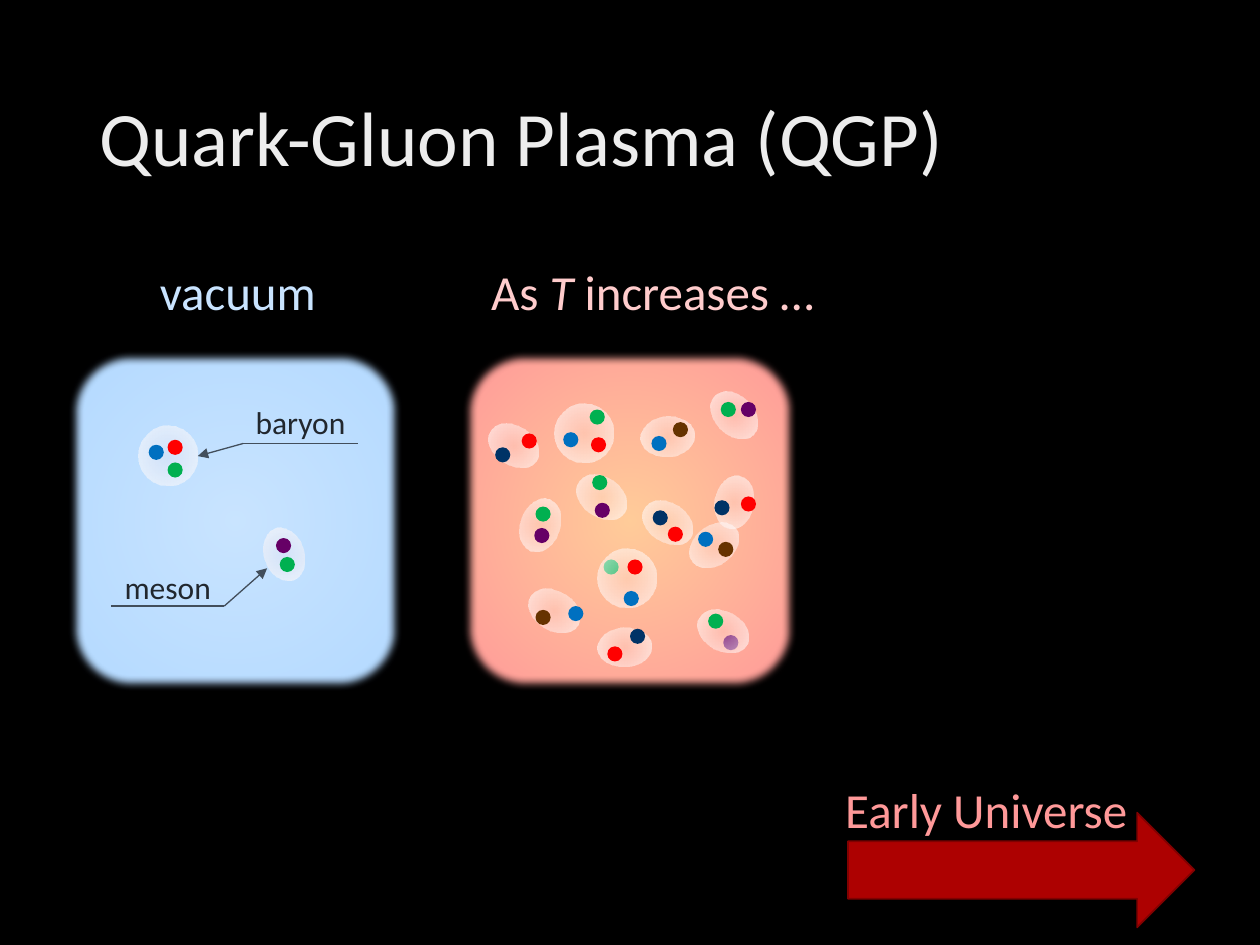
from lxml.etree import SubElement
from pptx import Presentation
from pptx.dml.color import RGBColor
from pptx.enum.shapes import MSO_CONNECTOR, MSO_SHAPE
from pptx.enum.text import MSO_ANCHOR
from pptx.oxml import parse_xml
from pptx.oxml.ns import nsdecls, qn
from pptx.util import Inches, Pt

# The slide is a grid of 1000 columns by 750 rows
CELL = Inches(10) // 1000
FONT = "Calibri"

BLACK = RGBColor(0x00, 0x00, 0x00)
TITLE_GREY = RGBColor(0xED, 0xED, 0xED)
PALE_BLUE = RGBColor(0xC9, 0xE4, 0xFF)
SKY_BLUE = RGBColor(0xB3, 0xD9, 0xFF)
PALE_PINK = RGBColor(0xFF, 0xCC, 0xCC)
SALMON = RGBColor(0xFF, 0x99, 0x99)
PEACH = RGBColor(0xFF, 0xCC, 0x99)
BLUSH = RGBColor(0xFF, 0xEE, 0xEE)
WHITE = RGBColor(0xFF, 0xFF, 0xFF)
ARROW_RED = RGBColor(0xAD, 0x01, 0x01)
ARROW_EDGE = RGBColor(0x80, 0x01, 0x01)
LABEL_INK = RGBColor(0x21, 0x27, 0x2E)
LINE_GREY = RGBColor(0x42, 0x4E, 0x5B)

# Quarks and antiquarks
RED = RGBColor(0xFF, 0x00, 0x00)
GREEN = RGBColor(0x00, 0xB0, 0x50)
BLUE = RGBColor(0x00, 0x70, 0xC0)
PURPLE = RGBColor(0x66, 0x00, 0x66)
NAVY = RGBColor(0x00, 0x33, 0x66)
BROWN = RGBColor(0x66, 0x33, 0x00)

QUARK = 12
BARYON = (47, 47)
MESON = (31, 43)

# Column, row, size, rotation
VACUUM_HADRONS = [(110, 338, BARYON, 0), (210, 418, MESON, 341.4)]
HOT_HADRONS = [
    (440, 320, BARYON, 0), (413, 395, MESON, 20.5),
    (474, 435, BARYON, 0), (514, 325, MESON, 84.8),
    (514, 393, MESON, 304.3), (424, 463, MESON, 122.2),
    (567, 377, MESON, 10.2), (558, 479, MESON, 298.4),
    (551, 411, MESON, 50.7), (392, 332, MESON, 304.3),
    (462, 373, MESON, 304.3), (567, 308, MESON, 315.7),
    (480, 492, MESON, 86.5),
]

# Column and row of every quark, by colour
VACUUM_QUARKS = {
    RED: [(133, 349)],
    GREEN: [(133, 367), (222, 442)],
    BLUE: [(118, 353)],
    PURPLE: [(219, 427)],
}
VEILED_QUARKS = {GREEN: [(479, 444)], PURPLE: [(574, 504)]}
HOT_QUARKS = {
    RED: [(469, 347), (482, 513), (498, 444), (414, 344), (530, 418), (588, 394)],
    GREEN: [(562, 487), (468, 325), (425, 402), (470, 377), (572, 319)],
    BLUE: [(447, 343), (495, 469), (451, 481), (517, 346), (554, 422)],
    PURPLE: [(424, 419), (472, 399), (588, 319)],
    NAVY: [(518, 405), (393, 355), (567, 397), (500, 499)],
    BROWN: [(425, 484), (570, 430), (534, 335)],
}


def grid(*cells):
    return [round(cell * CELL) for cell in cells]


def add_text(slide, box, runs, size, color, wrap=False):
    """Runs are pairs of text and italic."""
    shape = slide.shapes.add_textbox(*grid(*box))
    frame = shape.text_frame
    frame.word_wrap = wrap
    paragraph = frame.paragraphs[0]
    for text, italic in runs:
        run = paragraph.add_run()
        run.text = text
        if italic:
            run.font.italic = True
    paragraph.font.name = FONT
    paragraph.font.size = Pt(size)
    paragraph.font.color.rgb = color
    return shape


def add_plain_shape(slide, kind, box, color):
    shape = slide.shapes.add_shape(kind, *grid(*box))
    shape.shadow.inherit = False
    shape.fill.solid()
    shape.fill.fore_color.rgb = color
    shape.line.fill.background()
    return shape


def set_radial_fill(shape, stops):
    """Stops are position, colour and opacity, in percent, from the centre out."""
    stop_xml = "".join(
        f'<a:gs pos="{position * 1000}"><a:srgbClr val="{color}">'
        f'<a:alpha val="{opacity * 1000}"/></a:srgbClr></a:gs>'
        for position, color, opacity in stops
    )
    gradient = parse_xml(
        f'<a:gradFill {nsdecls("a")} rotWithShape="1"><a:gsLst>{stop_xml}</a:gsLst>'
        '<a:path path="circle"><a:fillToRect l="50000" t="50000" r="50000" b="50000"/>'
        "</a:path></a:gradFill>"
    )
    properties = shape._element.spPr
    properties.replace(properties.find(qn("a:solidFill")), gradient)


def add_panel(slide, column, inner, outer):
    panel = add_plain_shape(slide, MSO_SHAPE.ROUNDED_RECTANGLE, (column, 278, 265, 270), outer)
    set_radial_fill(panel, [(0, inner, 100), (98, outer, 100)])
    effects = panel._element.spPr.find(qn("a:effectLst"))
    SubElement(effects, qn("a:softEdge"), rad=str(Pt(5)))


def add_hadrons(slide, hadrons):
    for column, row, size, rotation in hadrons:
        hadron = add_plain_shape(slide, MSO_SHAPE.OVAL, (column, row, *size), WHITE)
        set_radial_fill(hadron, [(0, BLUSH, 25), (100, WHITE, 70)])
        hadron.rotation = rotation


def add_quarks(slide, quarks):
    for color, places in quarks.items():
        for column, row in places:
            add_plain_shape(slide, MSO_SHAPE.OVAL, (column, row, QUARK, QUARK), color)


def add_line(slide, start, end, arrow=False):
    line = slide.shapes.add_connector(MSO_CONNECTOR.STRAIGHT, *grid(*start, *end))
    line.line.color.rgb = LINE_GREY
    line.line.width = Pt(0.75)
    if arrow:
        SubElement(line.line._get_or_add_ln(), qn("a:tailEnd"), type="triangle")
    SubElement(line._element.spPr, qn("a:effectLst"))


def add_callout(slide, box, text, far, near, target):
    """A label, the line under it and an arrow to the hadron."""
    add_text(slide, box, [(text, False)], 18, LABEL_INK)
    add_line(slide, far, near)
    add_line(slide, near, target, arrow=True)


def main():
    presentation = Presentation()
    presentation.slide_width, presentation.slide_height = grid(1000, 750)
    slide = presentation.slides.add_slide(presentation.slide_layouts[6])
    slide.background.fill.solid()
    slide.background.fill.fore_color.rgb = BLACK

    # Title
    title = add_text(slide, (69, 40, 862, 145), [("Quark-Gluon Plasma (QGP)", False)],
                     44, TITLE_GREY, wrap=True)
    title.text_frame.vertical_anchor = MSO_ANCHOR.MIDDLE
    title.text_frame.paragraphs[0].line_spacing = 0.9

    # Vacuum
    add_text(slide, (117, 203, 144, 57), [("vacuum", False)], 28, PALE_BLUE)
    add_panel(slide, 54, PALE_BLUE, SKY_BLUE)
    add_hadrons(slide, VACUUM_HADRONS)
    add_quarks(slide, VACUUM_QUARKS)
    add_callout(slide, (193, 315, 91, 40), "baryon", (284, 352), (193, 352), (157, 362))
    add_callout(slide, (89, 446, 89, 40), "meson", (88, 481), (178, 481), (212, 451))

    # Rising temperature
    add_text(slide, (380, 203, 285, 57),
             [("As", False), (" T ", True), ("increases …", False)], 28, PALE_PINK)
    add_panel(slide, 367, PEACH, SALMON)
    add_quarks(slide, VEILED_QUARKS)
    add_hadrons(slide, HOT_HADRONS)
    add_quarks(slide, HOT_QUARKS)

    # Early Universe arrow
    arrow = add_plain_shape(slide, MSO_SHAPE.RIGHT_ARROW, (673, 645, 275, 91), ARROW_RED)
    arrow.line.color.rgb = ARROW_EDGE
    arrow.line.width = Pt(1)
    add_text(slide, (661, 614, 244, 57), [("Early Universe", False)], 28, SALMON)

    presentation.save("out.pptx")


if __name__ == "__main__":
    main()
